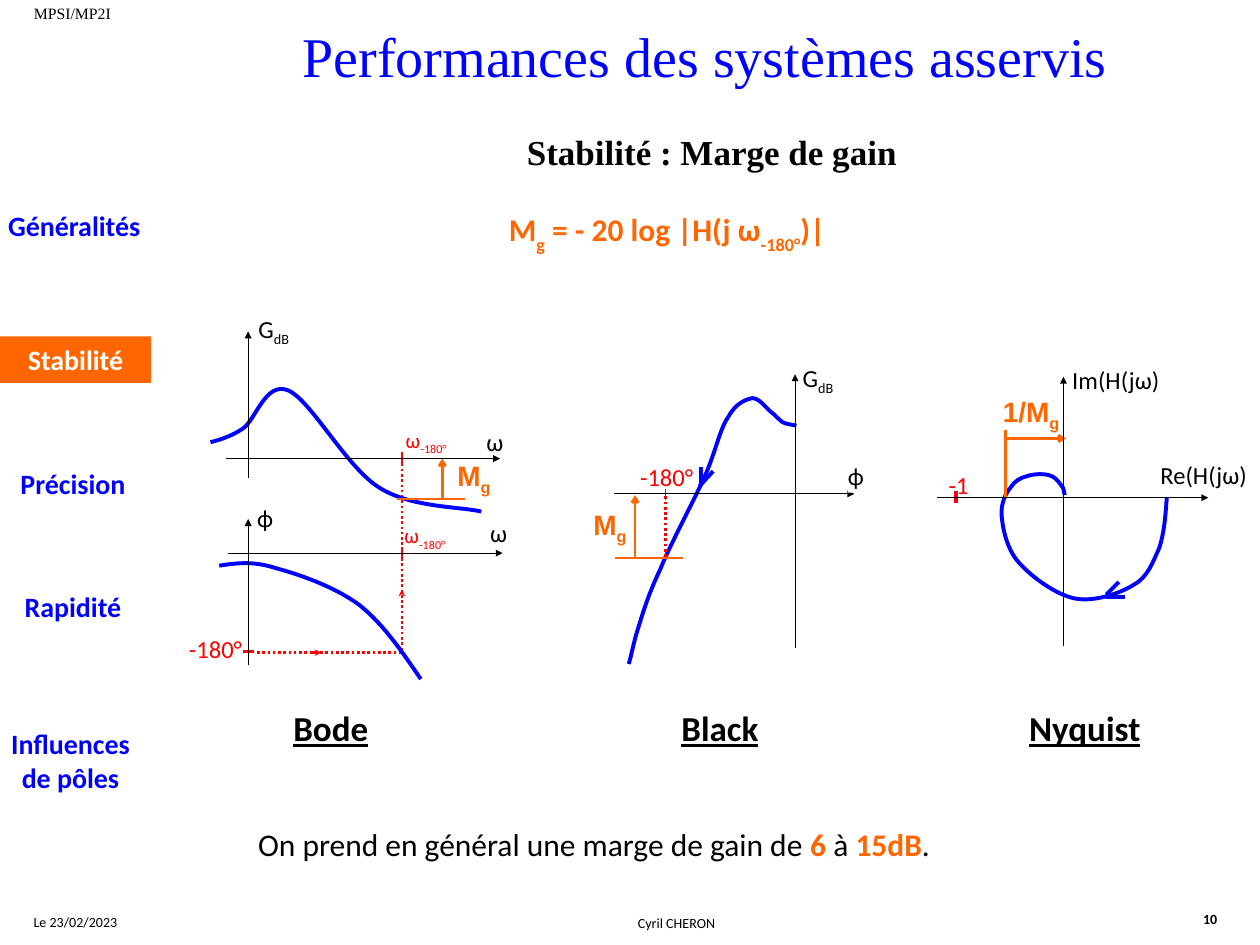
from lxml.etree import SubElement
from pptx import Presentation
from pptx.dml.color import RGBColor
from pptx.enum.dml import MSO_LINE
from pptx.enum.shapes import MSO_CONNECTOR, MSO_SHAPE
from pptx.enum.text import MSO_ANCHOR, MSO_AUTO_SIZE, PP_ALIGN
from pptx.oxml.ns import qn
from pptx.util import Inches, Pt

COLORS = {"black": "000000", "white": "FFFFFF", "blue": "0000FF",
          "red": "FF0000", "orange": "FF6600"}
SUBSCRIPT = {"baseline": -25}
LOW_SUBSCRIPT = {"baseline": -30}
PAGE_INSETS = (0.1, 0.05)
MENU_INSETS = (0.04, 0.05)
NO_INSETS = (0, 0)
ORANGE_LABEL = {"size": 16, "color": "orange", "name": "Arial", "bold": True}
GAIN_MARGIN = [("M", {}), ("g", SUBSCRIPT)]
GAIN_AXIS = [("G", {}), ("dB", SUBSCRIPT)]
PHASE_CROSSING = [("ω", {}), ("-180°", SUBSCRIPT)]


def rgb(name):
    """Return the named palette colour."""
    return RGBColor.from_string(COLORS[name])


def add_run(paragraph, text, size=14, color="black", baseline=0, **font_format):
    """Add one formatted run to a paragraph."""
    run = paragraph.add_run()
    run.text = text
    values = {"name": "Calibri", "size": Pt(size), **font_format}
    for attribute, value in values.items():
        setattr(run.font, attribute, value)
    run.font.color.rgb = rgb(color)
    if baseline:
        run.font._element.set("baseline", str(baseline * 1000))


def add_text(slide, box, content, insets=PAGE_INSETS, align=PP_ALIGN.LEFT,
             wrap=True, fill=None, **text_format):
    """Add a text box, or a filled rectangle with text."""
    position = [Inches(value) for value in box]
    if fill:
        shape = slide.shapes.add_shape(MSO_SHAPE.RECTANGLE, *position)
        shape.shadow.inherit = False
        shape.fill.solid()
        shape.fill.fore_color.rgb = rgb(fill)
        shape.line.fill.background()
    else:
        shape = slide.shapes.add_textbox(*position)
    horizontal, vertical = (Inches(value) for value in insets)
    frame_format = {
        "margin_left": horizontal, "margin_right": horizontal,
        "margin_top": vertical, "margin_bottom": vertical,
        "word_wrap": wrap, "vertical_anchor": MSO_ANCHOR.TOP,
        "auto_size": MSO_AUTO_SIZE.SHAPE_TO_FIT_TEXT if vertical else MSO_AUTO_SIZE.NONE,
    }
    for attribute, value in frame_format.items():
        setattr(shape.text_frame, attribute, value)
    paragraph = shape.text_frame.paragraphs[0]
    paragraph.alignment = align
    runs = [(content, {})] if isinstance(content, str) else content
    for text, changes in runs:
        add_run(paragraph, text, **{**text_format, **changes})


def add_label(slide, box, content, **text_format):
    """Add a diagram label without insets."""
    add_text(slide, box, content, insets=NO_INSETS, **text_format)


def add_line(slide, start, end, color, width=1.5, arrow=None, dotted=False):
    """Add a straight line, optionally dotted or ending in a small arrowhead."""
    ends = [Inches(value) for value in (*start, *end)]
    connector = slide.shapes.add_connector(MSO_CONNECTOR.STRAIGHT, *ends)
    connector.line.color.rgb = rgb(color)
    connector.line.width = Pt(width)
    if dotted:
        connector.line.dash_style = MSO_LINE.ROUND_DOT
    if arrow:
        SubElement(connector.line._get_or_add_ln(), qn("a:tailEnd"),
                   type=arrow, w="sm", len="sm")
    SubElement(connector._element.spPr, qn("a:effectLst"))


def add_axis(slide, start, end):
    """Add a thin diagram axis."""
    add_line(slide, start, end, "black", width=0.5, arrow="triangle")


def add_curve(slide, points):
    """Add a blue curve through chained cubic Bézier segments."""
    start, *controls = [(Inches(x), Inches(y)) for x, y in points]
    builder = slide.shapes.build_freeform(*start)
    builder.add_line_segments(controls, close=False)
    shape = builder.convert_to_shape()
    outline = next(shape._element.iter(qn("a:path")))
    segments = outline.findall(qn("a:lnTo"))
    for first in range(0, len(segments), 3):
        cubic = SubElement(outline, qn("a:cubicBezTo"))
        for segment in segments[first:first + 3]:
            cubic.append(segment[0])
            outline.remove(segment)
    shape.shadow.inherit = False
    shape.fill.background()
    shape.line.color.rgb = rgb("blue")
    shape.line.width = Pt(2.25)


def add_page_frame(slide):
    """Add the header, footer, title and side menu."""
    center = {"align": PP_ALIGN.CENTER}
    add_text(slide, (0.15, 7.2, 0.9, 0.24), "Le 23/02/2023", size=8, wrap=False, **center)
    add_text(slide, (1.25, 7.21, 8.24, 0.24), "Cyril CHERON", size=8, **center)
    add_text(slide, (9.45, 7.18, 0.39, 0.24), "10", size=8, bold=True, wrap=False)
    add_text(slide, (0.17, -0.02, 0.86, 0.25), "MPSI/MP2I", size=9, name="Times New Roman")
    add_text(slide, (2.17, 0.12, 6.85, 0.64), "Performances des systèmes asservis",
             size=32, color="blue", name="Times New Roman", wrap=False, **center)
    menu = [("Généralités", 0.01, 1.61, 0.37), ("Précision", 0, 3.65, 0.37),
            ("Rapidité", 0, 4.63, 0.37), ("Influences de pôles", -0.02, 5.72, 0.64)]
    for text, left, top, height in menu:
        add_text(slide, (left, top, 1.16, height), text, insets=MENU_INSETS,
                 size=16, color="blue", bold=True, **center)
    add_text(slide, (0, 2.67, 1.2, 0.37), "Stabilité", insets=MENU_INSETS,
             fill="orange", size=16, color="white", bold=True, **center)


def add_statements(slide):
    """Add the subtitle, the formula and the rule of thumb."""
    add_text(slide, (1.3, 0.99, 8.7, 0.44), "Stabilité : Marge de gain", size=20,
             name="Times New Roman", bold=True, align=PP_ALIGN.CENTER)
    formula = [("M", {}), ("g", LOW_SUBSCRIPT), (" = - 20 log |H(j ω", {}),
               ("-180°", LOW_SUBSCRIPT), (")|", {})]
    add_text(slide, (3.94, 1.62, 3.66, 0.5), formula, size=18, color="orange", bold=True)
    strong = {"color": "orange", "bold": True}
    advice = [("On prend en général une marge de gain de ", {}), ("6 ", strong),
              ("à ", {}), ("15dB", strong), (".", {})]
    add_text(slide, (1.95, 6.5, 7.35, 0.5), advice, size=18, wrap=False)


def add_bode(slide):
    """Add the Bode gain and phase diagrams."""
    crossing = 3.19
    add_label(slide, (1.5, 5.03, 0.57, 0.23), "-180°", color="red")
    add_line(slide, (1.93, 5.17), (2.02, 5.17), "red")
    add_line(slide, (2.04, 5.18), (crossing, 5.18), "red", dotted=True)
    add_line(slide, (crossing, 5.16), (crossing, 3.65), "red", dotted=True)
    add_line(slide, (2.48, 5.18), (2.55, 5.18), "red", arrow="stealth")
    add_line(slide, (crossing, 4.74), (crossing, 4.68), "red", arrow="stealth")
    for bottom, left, top in ((4.43, 3.21, 4.15), (3.68, 3.22, 3.39)):
        add_line(slide, (crossing, bottom), (crossing, bottom - 0.09), "red")
        add_label(slide, (left, top, 0.6, 0.21), PHASE_CROSSING, size=12, color="red")
    add_curve(slide, [(1.74, 4.49), (1.87, 4.47), (2.01, 4.45), (2.19, 4.51), (2.38, 4.56),
                      (2.66, 4.66), (2.85, 4.8), (3.04, 4.95), (3.19, 5.17), (3.34, 5.39)])
    add_curve(slide, [(1.67, 3.51), (1.71, 3.5), (1.83, 3.47), (1.93, 3.4), (2.03, 3.33),
                      (2.11, 3.02), (2.29, 3.1), (2.47, 3.18), (2.75, 3.71), (3.01, 3.87),
                      (3.26, 4.03), (3.65, 4.02), (3.82, 4.06)])
    add_line(slide, (3.15, 3.96), (3.69, 3.96), "orange")
    add_line(slide, (3.51, 3.96), (3.51, 3.64), "orange", arrow="arrow")
    add_label(slide, (3.63, 3.64, 0.55, 0.25), GAIN_MARGIN, **ORANGE_LABEL)
    for left, level, bottom in ((1.79, 3.64, 3.79), (1.81, 4.39, 5.28)):
        add_axis(slide, (left, level), (left + 2.18, level))
        add_axis(slide, (1.97, bottom), (1.97, bottom - 1.16))
    add_label(slide, (2.04, 3.99, 0.16, 0.25), "ϕ", fill="white")
    add_label(slide, (2.05, 2.49, 0.31, 0.25), GAIN_AXIS, fill="white")
    for left, top in ((3.86, 3.39), (3.89, 4.11)):
        add_label(slide, (left, top, 0.16, 0.25), "ω")


def add_black(slide):
    """Add the Black diagram."""
    add_line(slide, (5.56, 3.85), (5.56, 3.71), "blue", 2.25)
    add_line(slide, (5.55, 3.86), (5.66, 3.74), "blue", 2.25)
    add_curve(slide, [(6.32, 3.38), (6.3, 3.37), (6.24, 3.37), (6.21, 3.35), (6.18, 3.33),
                      (6.16, 3.3), (6.12, 3.27), (6.08, 3.24), (6.03, 3.16), (5.97, 3.16),
                      (5.92, 3.17), (5.84, 3.2), (5.78, 3.31), (5.71, 3.41), (5.68, 3.59),
                      (5.59, 3.79), (5.5, 3.99), (5.32, 4.32), (5.24, 4.52), (5.15, 4.71),
                      (5.11, 4.84), (5.07, 4.97), (5.03, 5.09), (5.01, 5.21), (4.99, 5.27)])
    add_line(slide, (5.28, 3.88), (5.28, 3.97), "red", 0.75)
    add_label(slide, (5.08, 3.67, 0.62, 0.23), "-180°", color="red")
    add_line(slide, (5.28, 4.42), (5.28, 3.93), "red", dotted=True)
    add_line(slide, (4.88, 4.43), (5.42, 4.43), "orange")
    add_line(slide, (5.04, 4.43), (5.04, 3.93), "orange", arrow="arrow")
    add_label(slide, (4.71, 4.03, 0.4, 0.25), GAIN_MARGIN, **ORANGE_LABEL)
    add_axis(slide, (4.87, 3.92), (6.78, 3.92))
    add_axis(slide, (6.31, 5.14), (6.31, 2.97))
    add_label(slide, (6.73, 3.66, 0.16, 0.25), "ϕ", fill="white")
    add_label(slide, (6.37, 2.88, 0.31, 0.25), GAIN_AXIS, fill="white")


def add_nyquist(slide):
    """Add the Nyquist diagram."""
    add_line(slide, (7.59, 3.9), (7.59, 3.99), "red", 2.25)
    add_label(slide, (7.53, 3.73, 0.2, 0.23), "-1", color="red")
    add_curve(slide, [(9.26, 3.95), (9.25, 4.09), (9.24, 4.23), (9.2, 4.35), (9.15, 4.46),
                      (9.11, 4.58), (9, 4.64), (8.89, 4.71), (8.68, 4.78), (8.53, 4.75),
                      (8.38, 4.72), (8.19, 4.58), (8.09, 4.47), (7.99, 4.36), (7.96, 4.2),
                      (7.95, 4.1), (7.94, 4), (7.98, 3.92), (8.02, 3.87), (8.05, 3.82),
                      (8.1, 3.79), (8.15, 3.78), (8.2, 3.76), (8.28, 3.76), (8.32, 3.77),
                      (8.37, 3.78), (8.4, 3.82), (8.42, 3.85), (8.45, 3.88), (8.44, 3.9),
                      (8.45, 3.93)])
    add_line(slide, (8.78, 4.72), (8.88, 4.62), "blue", 2.25)
    add_line(slide, (8.78, 4.74), (8.93, 4.74), "blue", 2.25)
    add_line(slide, (7.98, 3.41), (7.98, 3.95), "orange")
    add_line(slide, (7.99, 3.48), (8.46, 3.48), "orange", arrow="arrow")
    add_label(slide, (7.96, 3.13, 0.63, 0.25), [("1/", {}), *GAIN_MARGIN], **ORANGE_LABEL)
    add_label(slide, (9.21, 3.65, 0.79, 0.25), "Re(H(jω)", fill="white")
    add_axis(slide, (7.44, 3.95), (9.59, 3.95))
    add_axis(slide, (8.44, 5.13), (8.44, 2.99))
    add_label(slide, (8.51, 2.9, 0.79, 0.25), "Im(H(jω)", fill="white")


def main():
    """Build and save the gain margin slide."""
    presentation = Presentation()
    presentation.slide_width, presentation.slide_height = Inches(10), Inches(7.5)
    slide = presentation.slides.add_slide(presentation.slide_layouts[6])
    add_page_frame(slide)
    add_statements(slide)
    for add_diagram in (add_bode, add_black, add_nyquist):
        add_diagram(slide)
    for name, left, width in (("Bode", 2.23, 0.8), ("Black", 5.31, 0.88), ("Nyquist", 8.07, 1.13)):
        add_text(slide, (left, 5.56, width, 0.43), name, size=20, bold=True,
                 underline=True, wrap=False)
    presentation.save("out.pptx")


if __name__ == "__main__":
    main()
